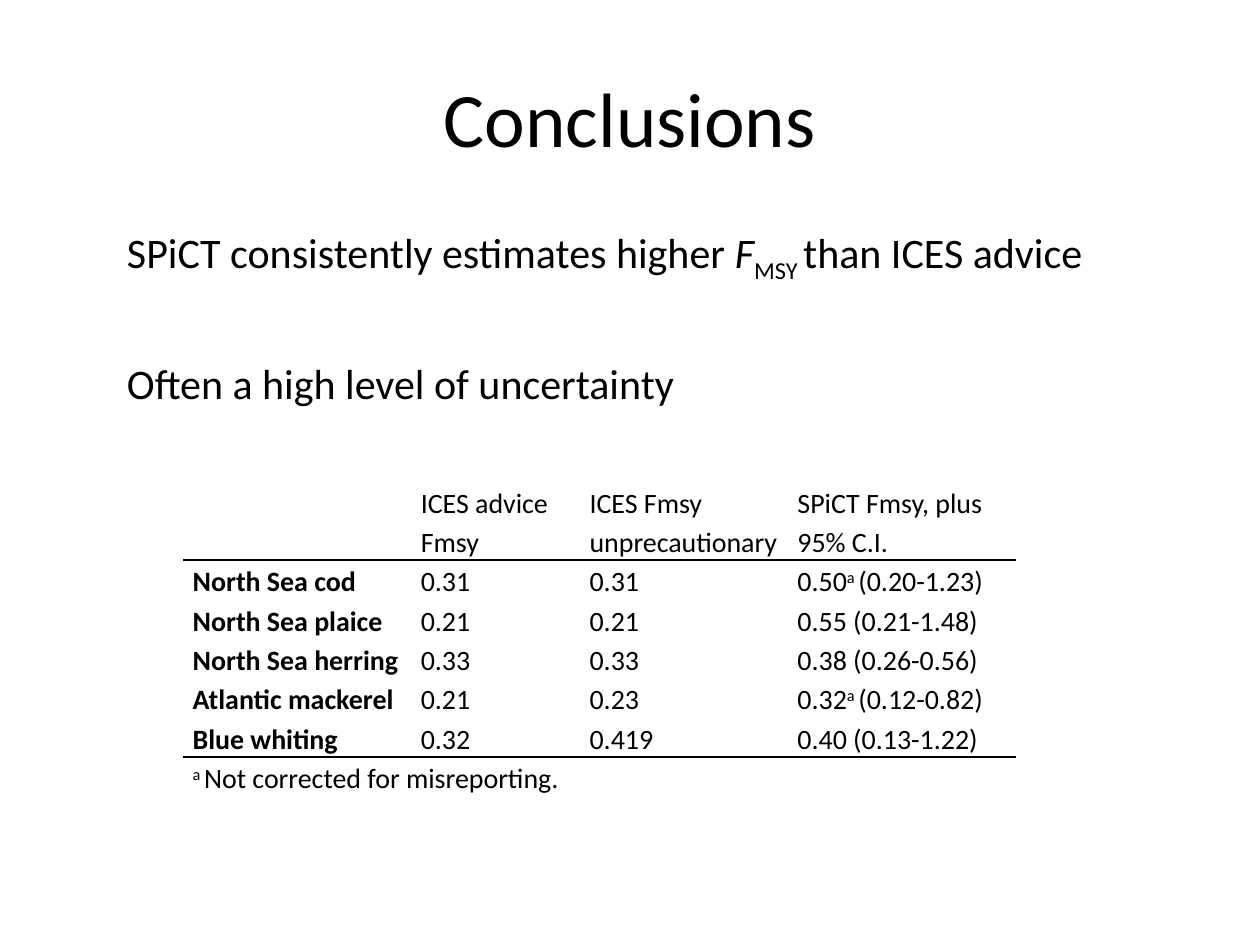
from lxml.etree import SubElement
from pptx import Presentation
from pptx.dml.color import RGBColor
from pptx.enum.text import MSO_ANCHOR, PP_ALIGN
from pptx.oxml import parse_xml
from pptx.oxml.ns import nsdecls, qn
from pptx.util import Inches, Pt

INK = {"text": "000000", "back": "FFFFFF"}


def write(para, runs, size):
    """Add runs given as (text, baseline in percent, font values)."""
    for text, base, style in runs:
        run = para.add_run()
        run.text = text
        run.font.color.rgb = RGBColor.from_string(INK["text"])
        for key, val in {"name": "Calibri", "size": Pt(size), **style}.items():
            setattr(run.font, key, val)
        if base:
            run.font._element.set("baseline", str(base * 1000))


def rule(cell, side):
    """Draw a thin line on one side of a cell."""
    line = parse_xml(
        f'<a:{side} {nsdecls("a")} w="12700"><a:solidFill>'
        f'<a:srgbClr val="{INK["text"]}"/></a:solidFill></a:{side}>')
    cell._tc.get_or_add_tcPr().insert(0, line)


deck = Presentation()
deck.slide_width, deck.slide_height = Inches(10), Inches(7.5)
slide = deck.slides.add_slide(deck.slide_layouts[5])

# Title
title = slide.shapes.title
place = {"left": 0.5, "top": 0.3, "width": 9, "height": 1.25}
for key, val in place.items():
    setattr(title, key, Inches(val))
title.text_frame.vertical_anchor = MSO_ANCHOR.MIDDLE
head = title.text_frame.paragraphs[0]
head.alignment = PP_ALIGN.CENTER
write(head, [("Conclusions", 0, {})], 44)

# Table
rows = [
    [""],
    ["", "ICES advice Fmsy", "ICES Fmsy\nunprecautionary",
     "SPiCT Fmsy, plus 95% C.I."],
    ["North Sea cod", "0.31", "0.31", "0.50^a ^(0.20-1.23)"],
    ["North Sea plaice", "0.21", "0.21", "0.55 (0.21-1.48)"],
    ["North Sea herring", "0.33", "0.33", "0.38 (0.26-0.56)"],
    ["Atlantic mackerel", "0.21", "0.23", "0.32^a ^(0.12-0.82)"],
    ["Blue whiting", "0.32", "0.419", "0.40 (0.13-1.22)"],
    ["^a ^Not corrected for misreporting."],
]
widths = [1.81, 1.34, 1.65, 1.81, 1.93]
high = 0.31
last = len(rows) - 1
ruled = (1, last - 1)  # rows with a line below
grid = slide.shapes.add_table(
    len(rows), len(widths), Inches(1.46), Inches(3.51),
    Inches(sum(widths)), Inches(high * (len(rows) + 1))).table
grid.first_row = grid.horz_banding = False
for col, width in zip(grid.columns, widths):
    col.width = Inches(width)

pads = {"margin_left": 0.07, "margin_right": 0.07,
        "margin_top": 0, "margin_bottom": 0}
for r, row in enumerate(rows):
    grid.rows[r].height = Inches(high * (2 if r == 1 else 1))
    for c in range(len(widths)):
        cell = grid.cell(r, c)
        for key, val in pads.items():
            setattr(cell, key, Inches(val))
        cell.fill.solid()
        cell.fill.fore_color.rgb = RGBColor.from_string(INK["back"])
        if c < 4 and r in ruled:
            rule(cell, "a:lnB"[2:])
        if c < 4 and r - 1 in ruled:
            rule(cell, "lnT")

        frame = cell.text_frame
        text = row[c] if c < len(row) else ""
        bold = c == 0 and 1 < r < last
        for n, line in enumerate(text.split("\n")):
            para = frame.add_paragraph() if n else frame.paragraphs[0]
            para.line_spacing = 1.15
            # Text between carets is raised
            runs = [(part, 30 * (k % 2), {"bold": bold})
                    for k, part in enumerate(line.split("^")) if part]
            write(para, runs, 16)
            if not runs:
                SubElement(para._p, qn("a:endParaRPr"), sz="1600")
grid.cell(0, 0).merge(grid.cell(0, 4))
grid.cell(last, 0).merge(grid.cell(last, 3))

# Findings
points = [
    [("SPiCT consistently estimates higher ", 0, {}),
     ("F", 0, {"italic": True}),
     ("MSY ", -25, {}),
     ("than ICES advice", 0, {})],
    [("Often a high level of uncertainty", 0, {})],
]
body = slide.shapes.add_textbox(
    Inches(0.91), Inches(1.75), Inches(8.9), Inches(5.54)).text_frame
body.word_wrap = True
for n, runs in enumerate(points):
    para = body.add_paragraph() if n else body.paragraphs[0]
    para.space_before = Pt(42 if n else 5)
    write(para, runs, 24)

deck.save("out.pptx")
